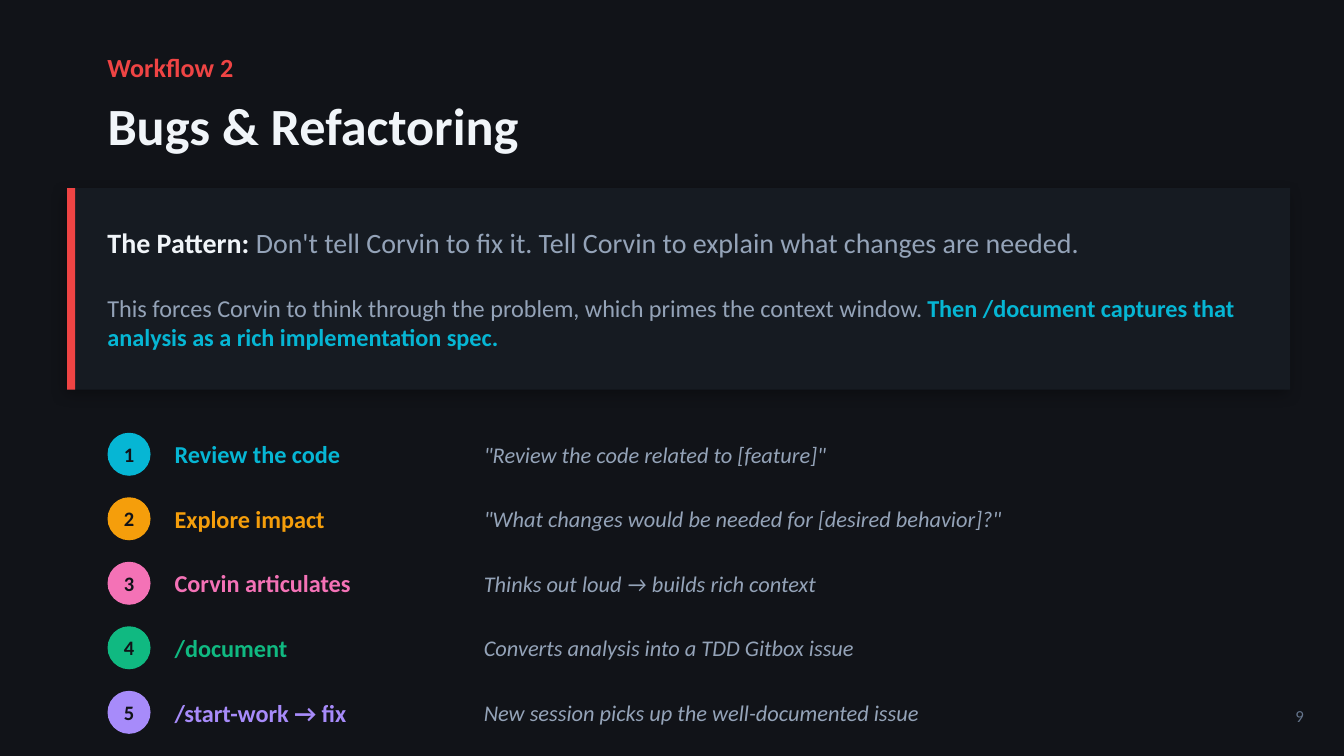
from dataclasses import dataclass

from lxml import etree
from pptx import Presentation
from pptx.dml.color import RGBColor
from pptx.enum.shapes import MSO_SHAPE
from pptx.enum.text import MSO_ANCHOR, MSO_AUTO_SIZE, PP_ALIGN
from pptx.oxml.ns import qn
from pptx.util import Inches, Pt

RECTANGLE, OVAL = MSO_SHAPE.RECTANGLE, MSO_SHAPE.OVAL
MIDDLE, NO_FIT = MSO_ANCHOR.MIDDLE, MSO_AUTO_SIZE.NONE
LEFT, CENTER, RIGHT = PP_ALIGN.LEFT, PP_ALIGN.CENTER, PP_ALIGN.RIGHT


@dataclass(frozen=True)
class Theme:
    font: str = "Calibri"
    background: str = "111318"
    panel: str = "161B22"
    bright: str = "F1F5F9"
    muted: str = "94A3B8"
    faint: str = "64748B"
    red: str = "EF4444"
    cyan: str = "06B6D4"
    amber: str = "F59E0B"
    pink: str = "F472B6"
    green: str = "10B981"
    violet: str = "A78BFA"
    shadow: str = "000000"
    title_size: int = 28
    pattern_size: int = 15
    kicker_size: int = 14
    body_size: int = 13
    detail_size: int = 12
    badge_size: int = 11
    number_size: int = 9


THEME = Theme()

KICKER = "Workflow 2"
TITLE = "Bugs & Refactoring"
PAGE_NUMBER = "9"
PATTERN = [
    ("The Pattern: ", THEME.bright, True),
    ("Don't tell Corvin to fix it. Tell Corvin to explain what changes are needed.", THEME.muted, False),
]
REASON = [
    ("This forces Corvin to think through the problem, which primes the context window. ", THEME.muted, False),
    ("Then /document captures that analysis as a rich implementation spec.", THEME.cyan, True),
]
STEPS = [
    ("Review the code", '"Review the code related to [feature]"', THEME.cyan),
    ("Explore impact", '"What changes would be needed for [desired behavior]?"', THEME.amber),
    ("Corvin articulates", "Thinks out loud → builds rich context", THEME.pink),
    ("/document", "Converts analysis into a TDD Gitbox issue", THEME.green),
    ("/start-work → fix", "New session picks up the well-documented issue", THEME.violet),
]

SLIDE_WIDTH = 10
SLIDE_HEIGHT = SLIDE_WIDTH * 9 / 16
MARGIN = 0.8
PANEL_LEFT, PANEL_TOP, PANEL_WIDTH, PANEL_HEIGHT = 0.5, 1.4, 9.1, 1.5
ACCENT_WIDTH = 0.06
PANEL_TEXT_WIDTH, PANEL_TEXT_HEIGHT = 8.5, 0.5
PANEL_TEXT_TOP, PANEL_TEXT_PITCH = 1.55, 0.6
LABEL_LEFT, DETAIL_LEFT = 1.3, 3.6
FIRST_STEP_MIDDLE, STEP_PITCH = 3.38, 0.48
BADGE_SIZE, STEP_TEXT_HEIGHT = 0.32, 0.35


def color(value):
    return RGBColor.from_string(value)


def write(shape, content, size, fill=THEME.muted, bold=False, italic=False, align=LEFT, inset=0):
    spans = [(content, fill, bold)] if isinstance(content, str) else content
    frame = shape.text_frame
    frame.word_wrap = True
    frame.auto_size = NO_FIT
    frame.vertical_anchor = MIDDLE
    frame.margin_left = frame.margin_right = Inches(inset)
    frame.margin_top = frame.margin_bottom = Inches(inset / 2)
    para = frame.paragraphs[0]
    para.alignment = align
    for text, span_fill, span_bold in spans:
        span = para.add_run()
        span.text = text
        span.font.name = THEME.font
        span.font.size = Pt(size)
        span.font.bold = span_bold
        span.font.italic = italic
        span.font.color.rgb = color(span_fill)


def add_text(page, area, content, size, **style):
    box = page.shapes.add_textbox(*map(Inches, area))
    write(box, content, size, **style)


def add_block(page, kind, area, fill):
    block = page.shapes.add_shape(kind, *map(Inches, area))
    block.shadow.inherit = False
    block.fill.solid()
    block.fill.fore_color.rgb = color(fill)
    block.line.fill.background()
    return block


def add_shadow(block, opacity, blur, distance, angle):
    effects = block._element.spPr.find(qn("a:effectLst"))
    shadow = etree.SubElement(
        effects, qn("a:outerShdw"), blurRad=str(Pt(blur)), dist=str(Pt(distance)),
        dir=str(angle * 60000), algn="bl", rotWithShape="0")
    tint = etree.SubElement(shadow, qn("a:srgbClr"), val=THEME.shadow)
    etree.SubElement(tint, qn("a:alpha"), val=str(opacity * 1000))


def add_header(page):
    add_text(page, (MARGIN, 0.3, 3, 0.4), KICKER, THEME.kicker_size, fill=THEME.red, bold=True)
    title = page.shapes.title
    title.left, title.top, title.width, title.height = map(Inches, (MARGIN, 0.65, 8, 0.55))
    write(title, TITLE, THEME.title_size, fill=THEME.bright, bold=True)


def add_panel(page):
    panel = add_block(page, RECTANGLE, (PANEL_LEFT, PANEL_TOP, PANEL_WIDTH, PANEL_HEIGHT), THEME.panel)
    add_shadow(panel, opacity=30, blur=8, distance=3, angle=135)
    add_block(page, RECTANGLE, (PANEL_LEFT, PANEL_TOP, ACCENT_WIDTH, PANEL_HEIGHT), THEME.red)
    lines = [(PATTERN, THEME.pattern_size), (REASON, THEME.body_size)]
    for row, (spans, size) in enumerate(lines):
        top = PANEL_TEXT_TOP + row * PANEL_TEXT_PITCH
        add_text(page, (MARGIN, top, PANEL_TEXT_WIDTH, PANEL_TEXT_HEIGHT), spans, size)


def add_steps(page):
    for row, (label, detail, fill) in enumerate(STEPS):
        middle = FIRST_STEP_MIDDLE + row * STEP_PITCH
        text_top = middle - STEP_TEXT_HEIGHT / 2
        badge = add_block(page, OVAL, (MARGIN, middle - BADGE_SIZE / 2, BADGE_SIZE, BADGE_SIZE), fill)
        write(badge, str(row + 1), THEME.badge_size, fill=THEME.background, bold=True, align=CENTER)
        add_text(page, (LABEL_LEFT, text_top, 2.2, STEP_TEXT_HEIGHT), label, THEME.body_size,
                 fill=fill, bold=True)
        add_text(page, (DETAIL_LEFT, text_top, 6, STEP_TEXT_HEIGHT), detail, THEME.detail_size,
                 italic=True)


def main():
    deck = Presentation()
    deck.slide_width, deck.slide_height = Inches(SLIDE_WIDTH), Inches(SLIDE_HEIGHT)
    page = deck.slides.add_slide(deck.slide_layouts.get_by_name("Title Only"))
    page.background.fill.solid()
    page.background.fill.fore_color.rgb = color(THEME.background)
    add_header(page)
    add_panel(page)
    add_steps(page)
    add_text(page, (9.3, 5.15, 0.5, 0.35), PAGE_NUMBER, THEME.number_size,
             fill=THEME.faint, align=RIGHT, inset=0.1)
    deck.save("out.pptx")


if __name__ == "__main__":
    main()
